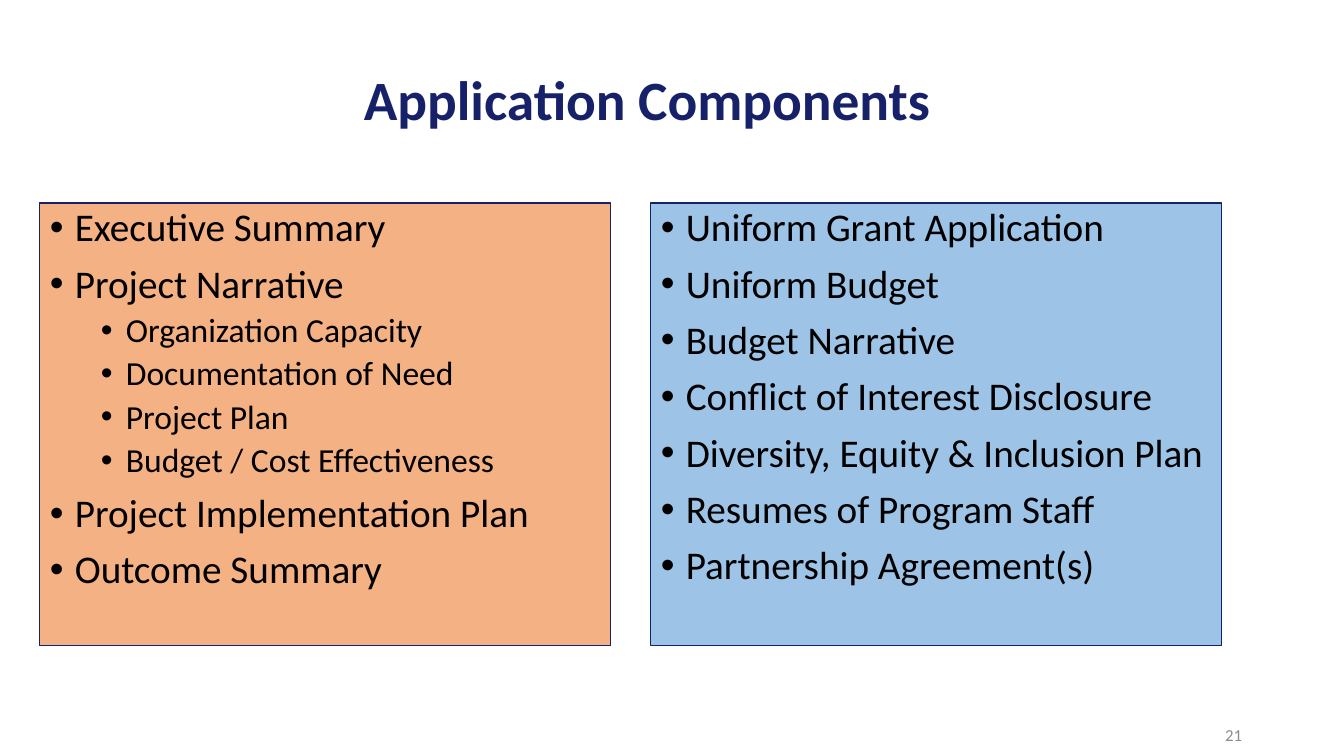
from lxml.etree import SubElement
from pptx import Presentation
from pptx.dml.color import RGBColor
from pptx.enum.shapes import MSO_SHAPE
from pptx.enum.text import MSO_ANCHOR, PP_ALIGN
from pptx.oxml.ns import qn
from pptx.util import Emu, Pt

EMU_PER_PX = 914400 / 100.8
NAVY, BLACK, GRAY = "172169", "000000", "8C8C8C"
ORANGE, BLUE = "F4B183", "9DC3E6"
PANEL_LEFT, PANEL_TOP, PANEL_WIDTH, PANEL_HEIGHT, PANEL_GAP = 40, 203, 571, 443, 40
BULLET_HANG = 25
# Per outline level: left margin in px, font size and space before in points
LEVELS = [(25, 28, 10), (76, 24, 5)]

PANELS = [
    (ORANGE, [
        (0, "Executive Summary"),
        (0, "Project Narrative"),
        (1, "Organization Capacity"),
        (1, "Documentation of Need"),
        (1, "Project Plan"),
        (1, "Budget / Cost Effectiveness"),
        (0, "Project Implementation Plan"),
        (0, "Outcome Summary"),
    ]),
    (BLUE, [
        (0, "Uniform Grant Application"),
        (0, "Uniform Budget"),
        (0, "Budget Narrative"),
        (0, "Conflict of Interest Disclosure"),
        (0, "Diversity, Equity & Inclusion Plan"),
        (0, "Resumes of Program Staff"),
        (0, "Partnership Agreement(s)"),
    ]),
]


def px(length):
    return Emu(round(length * EMU_PER_PX))


def color(value):
    return RGBColor.from_string(value)


def set_font(paragraph, size, hex_color, bold=False):
    font = paragraph.font
    font.name = "Calibri"
    font.size = Pt(size)
    font.bold = bold
    font.color.rgb = color(hex_color)


def add_text(slide, box, text, size, hex_color, bold=False, align=PP_ALIGN.LEFT):
    shape = slide.shapes.add_textbox(*map(px, box))
    frame = shape.text_frame
    frame.word_wrap = True
    frame.vertical_anchor = MSO_ANCHOR.MIDDLE
    paragraph = frame.paragraphs[0]
    paragraph.text = text
    paragraph.alignment = align
    set_font(paragraph, size, hex_color, bold)


def add_bullet(paragraph, level, text, is_first):
    margin, size, space_before = LEVELS[level]
    paragraph.text = text
    paragraph.level = level
    paragraph.alignment = PP_ALIGN.LEFT
    paragraph.line_spacing = 0.9
    paragraph.space_before = Pt(0 if is_first else space_before)
    properties = paragraph._p.get_or_add_pPr()
    properties.set("marL", str(px(margin)))
    properties.set("indent", str(px(-BULLET_HANG)))
    SubElement(properties, qn("a:buFont"), typeface="Arial")
    SubElement(properties, qn("a:buChar"), char="•")
    set_font(paragraph, size, BLACK)


def add_panel(slide, left, fill, items):
    shape = slide.shapes.add_shape(
        MSO_SHAPE.RECTANGLE, px(left), px(PANEL_TOP), px(PANEL_WIDTH), px(PANEL_HEIGHT))
    shape.shadow.inherit = False
    shape.fill.solid()
    shape.fill.fore_color.rgb = color(fill)
    shape.line.color.rgb = color(NAVY)
    shape.line.width = Pt(0.75)
    frame = shape.text_frame
    frame.word_wrap = True
    frame.vertical_anchor = MSO_ANCHOR.TOP
    for index, (level, text) in enumerate(items):
        paragraph = frame.add_paragraph() if index else frame.paragraphs[0]
        add_bullet(paragraph, level, text, is_first=index == 0)


def main():
    presentation = Presentation()
    presentation.slide_width = px(1344)
    presentation.slide_height = px(756)
    slide = presentation.slides.add_slide(presentation.slide_layouts[6])

    add_text(slide, (354, 67, 840, 62), "Application Components", 39.6, NAVY, bold=True)
    for column, (fill, items) in enumerate(PANELS):
        add_panel(slide, PANEL_LEFT + column * (PANEL_WIDTH + PANEL_GAP), fill, items)
    add_text(slide, (950, 715, 302, 40), "21", 12, GRAY, align=PP_ALIGN.RIGHT)

    presentation.save("out.pptx")


if __name__ == "__main__":
    main()
